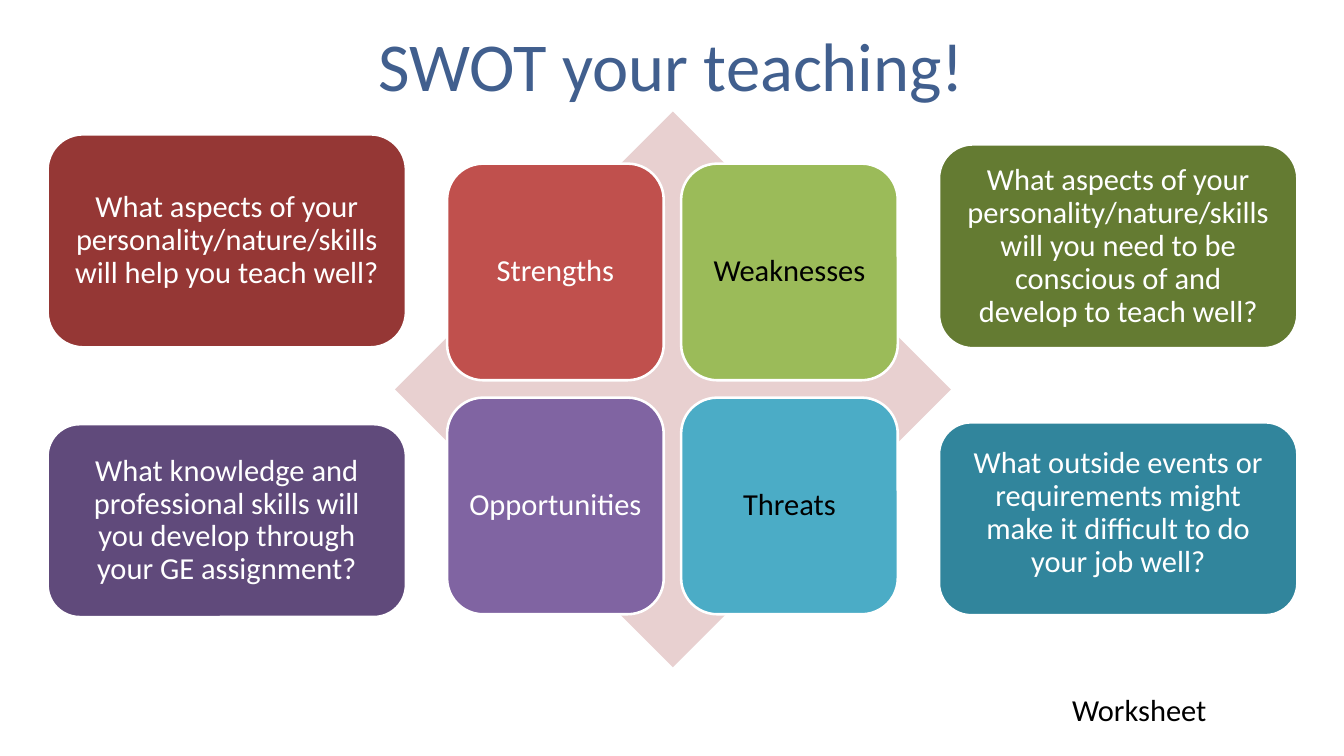
from pptx import Presentation
from pptx.dml.color import RGBColor
from pptx.enum import shapes, text
from pptx.util import Inches, Pt

COLORS = {
    "title": "415F8E", "white": "FFFFFF", "black": "000000", "diamond": "E8D0D0",
    "red": "C0504D", "green": "9BBB59", "purple": "8064A2", "teal": "4BACC6",
    "dark_red": "953735", "dark_green": "647B32",
    "dark_purple": "604A7B", "dark_teal": "31859C",
}
TILE_SIZE, TILE_STEP = 2.37, 2.56
TILES_LEFT, TILES_TOP = 4.89, 1.79
TILES = [
    ("Strengths", "red", "white"), ("Weaknesses", "green", "black"),
    ("Opportunities", "purple", "white"), ("Threats", "teal", "black"),
]
LEFT_X, RIGHT_X, QUESTION_WIDTH = 0.52, 10.27, 3.92
# Left, top, height, bottom inset, fill, wording
QUESTIONS = [
    (LEFT_X, 1.47, 2.33, 0.09, "dark_red",
     "What aspects of your personality/nature/skills will help you teach well? "),
    (RIGHT_X, 1.58, 2.23, 0.09, "dark_green",
     "What aspects of your personality/nature/skills will you need to be "
     "conscious of and develop to teach well?"),
    (LEFT_X, 4.64, 2.11, 0.09, "dark_purple",
     "What knowledge and professional skills will you develop through "
     "your GE assignment?"),
    (RIGHT_X, 4.62, 2.11, 0.21, "dark_teal",
     "What outside events or requirements might make it difficult to do "
     "your job well?"),
]


def rgb(name):
    return RGBColor.from_string(COLORS[name])


class SwotSlide:
    font = "Calibri"

    def __init__(self, prs):
        self.s = prs.slides.add_slide(prs.slide_layouts[5])

    def set_text(self, sp, wording, color, size=24, spacing=0.9,
                 insets=(0.1, 0.05, 0.1, 0.05), anchor=text.MSO_ANCHOR.MIDDLE):
        """Fill a shape with one centred paragraph; insets run left, top, right, bottom."""
        tf = sp.text_frame
        tf.text = wording
        frame = dict(zip(("margin_left", "margin_top", "margin_right", "margin_bottom"),
                         map(Inches, insets)))
        frame.update(word_wrap=True, auto_size=text.MSO_AUTO_SIZE.NONE,
                     vertical_anchor=anchor)
        p = tf.paragraphs[0]
        r = p.runs[0]
        r.font.color.rgb = rgb(color)
        formats = [
            (tf, frame),
            (p, {"alignment": text.PP_ALIGN.CENTER, "line_spacing": spacing}),
            (r.font, {"name": self.font, "size": Pt(size)}),
        ]
        for target, values in formats:
            for name, value in values.items():
                setattr(target, name, value)

    def title(self, wording, box):
        sp = self.s.shapes.title
        for name, value in zip(("left", "top", "width", "height"), box):
            setattr(sp, name, Inches(value))
        self.set_text(sp, wording, "title", size=54, spacing=1.0,
                      insets=(0.11, 0.06, 0.11, 0.06), anchor=text.MSO_ANCHOR.BOTTOM)

    def shape(self, kind, box, fill, outline=None):
        sp = self.s.shapes.add_shape(kind, *map(Inches, box))
        sp.shadow.inherit = False
        sp.fill.solid()
        sp.fill.fore_color.rgb = rgb(fill)
        if outline:
            sp.line.color.rgb = rgb(outline)
            sp.line.width = Pt(2)
        else:
            sp.line.fill.background()
        return sp

    def card(self, wording, box, fill, color, insets):
        sp = self.shape(shapes.MSO_SHAPE.ROUNDED_RECTANGLE, box, fill, "white")
        self.set_text(sp, wording, color, insets=insets)

    def label(self, wording, box):
        sp = self.s.shapes.add_textbox(*map(Inches, box))
        self.set_text(sp, wording, "black", spacing=0.93, anchor=text.MSO_ANCHOR.TOP)


def main():
    prs = Presentation()
    prs.slide_width, prs.slide_height = Inches(14.7), Inches(8.27)
    swot = SwotSlide(prs)
    swot.title("SWOT your teaching!", (0.73, 0.13, 13.23, 1.08))
    swot.shape(shapes.MSO_SHAPE.DIAMOND, (4.32, 1.22, 6.08, 6.08), "diamond")
    for i, (wording, fill, color) in enumerate(TILES):
        row, col = divmod(i, 2)
        box = (TILES_LEFT + col * TILE_STEP, TILES_TOP + row * TILE_STEP,
               TILE_SIZE, TILE_SIZE)
        swot.card(wording, box, fill, color, (0.1, 0.1, 0.1, 0.1))
    for left, top, height, bottom, fill, wording in QUESTIONS:
        swot.card(wording, (left, top, QUESTION_WIDTH, height), fill, "white",
                  (0.18, 0.09, 0.18, bottom))
    swot.label("Worksheet", (11.57, 7.55, 1.78, 0.48))
    prs.save("out.pptx")


if __name__ == "__main__":
    main()
